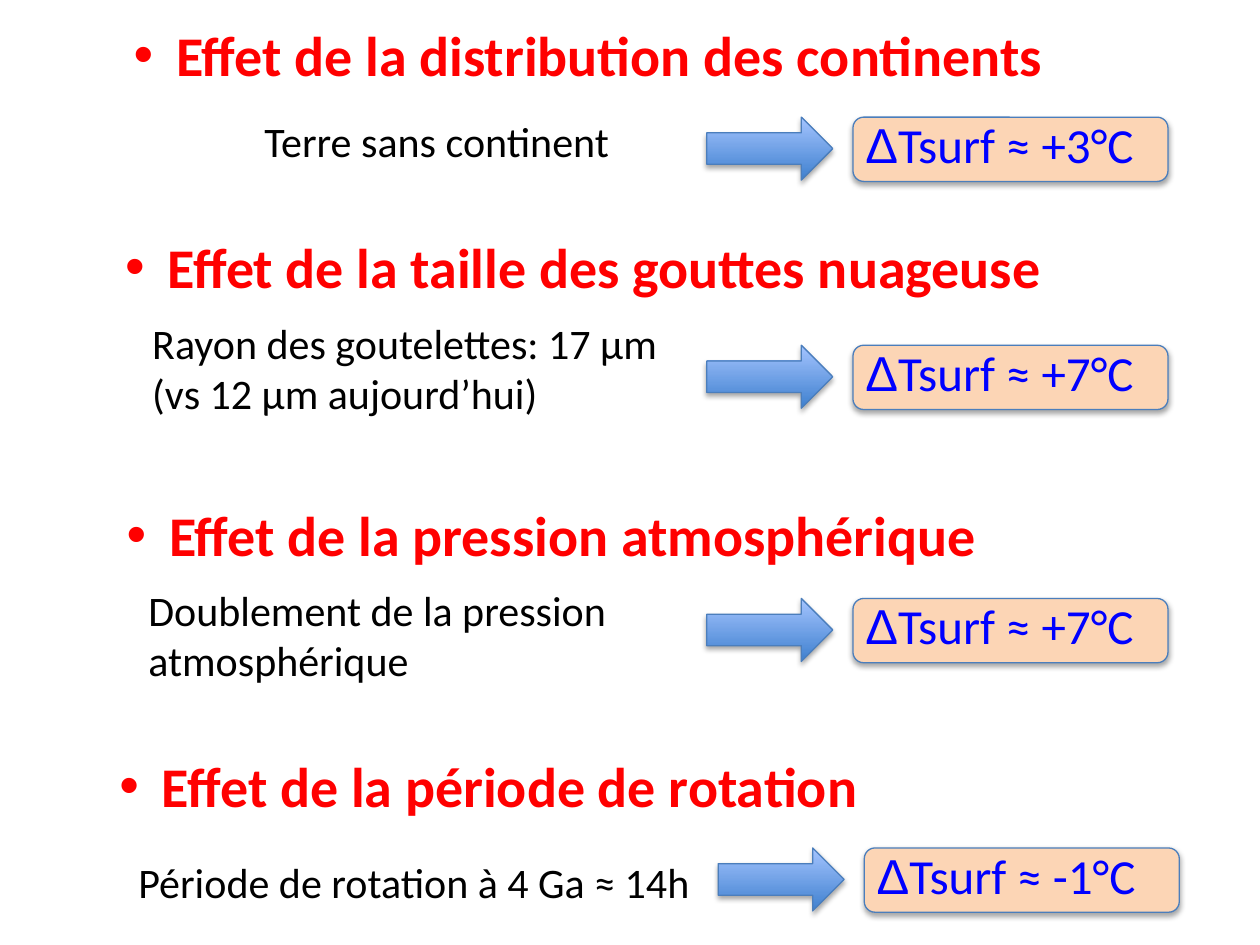
from dataclasses import dataclass

from lxml.etree import SubElement
from pptx import Presentation
from pptx.dml.color import RGBColor
from pptx.enum.shapes import MSO_SHAPE
from pptx.enum.text import MSO_ANCHOR, MSO_AUTO_SIZE, PP_ALIGN
from pptx.oxml.ns import qn
from pptx.util import Inches, Pt


def color(value):
    return RGBColor.from_string(value)


@dataclass
class Effect:
    heading: str
    heading_left: float
    heading_top: float
    cause: list
    cause_box: tuple
    change: str
    result_top: float
    shift: float = 0
    wrap: bool = True


EFFECTS = [
    Effect("Effet de la distribution des continents", 0.17, 0.08,
           ["Terre sans continent"], (2, 0.87, 6.42, 0.5), "+3°C", 0.93),
    Effect("Effet de la taille des gouttes nuageuse", 0.17, 1.76,
           ["Rayon des goutelettes: 17 μm", "(vs 12 μm aujourd’hui)"],
           (1.11, 2.47, 6.42, 0.91), "+7°C", 2.74),
    Effect("Effet de la pression atmosphérique", -0.08, 3.89,
           ["Doublement de la pression atmosphérique"],
           (1.08, 4.59, 4.67, 0.91), "+7°C", 4.75),
    Effect("Effet de la période de rotation", -0.58, 5.88,
           ["Période de rotation à 4 Ga ≈ 14h"], (1, 6.75, 4.62, 0.5),
           "-1°C", 6.73, shift=0.09, wrap=False),
]


class EffectSlide:
    FONT = "Calibri"
    HEADING = "FF0000"
    BODY = "000000"
    RESULT = "0000FF"
    BOX = "FCD5B5"
    OUTLINE = "4B7EBC"
    ARROW = ("3F80CE", "A4C4FF")

    def __init__(self, presentation):
        self.slide = presentation.slides.add_slide(presentation.slide_layouts[5])

    def style(self, paragraph, size, value, bold=False):
        font = paragraph.font
        font.name = self.FONT
        font.size = Pt(size)
        font.bold = bold
        font.color.rgb = color(value)

    def textbox(self, box, wrap=True):
        frame = self.slide.shapes.add_textbox(*map(Inches, box)).text_frame
        frame.word_wrap = wrap
        frame.auto_size = MSO_AUTO_SIZE.SHAPE_TO_FIT_TEXT
        return frame

    def format_heading(self, frame, text):
        frame.word_wrap = True
        frame.auto_size = MSO_AUTO_SIZE.NONE
        frame.vertical_anchor = MSO_ANCHOR.MIDDLE
        paragraph = frame.paragraphs[0]
        paragraph.text = f" {text}"
        paragraph.alignment = PP_ALIGN.CENTER
        self.style(paragraph, 32, self.HEADING, bold=True)
        properties = paragraph._p.get_or_add_pPr()
        SubElement(properties, qn("a:buFont"), typeface="Arial")
        SubElement(properties, qn("a:buChar"), char="•")

    def title(self, text, left, top):
        title = self.slide.shapes.title
        title.left, title.top = Inches(left), Inches(top)
        title.width, title.height = Inches(9), Inches(0.7)
        self.format_heading(title.text_frame, text)

    def heading(self, text, left, top):
        self.format_heading(self.textbox((left, top, 9, 0.7)), text)

    def cause(self, lines, box, wrap):
        frame = self.textbox(box, wrap)
        frame.text = "\n".join(lines)
        for paragraph in frame.paragraphs:
            self.style(paragraph, 24, self.BODY)

    def raised_shape(self, kind, box):
        shape = self.slide.shapes.add_shape(kind, *map(Inches, box))
        shape.line.color.rgb = color(self.OUTLINE)
        shape.line.width = Pt(0.75)
        shape.shadow.inherit = False
        effects = shape._element.spPr.find(qn("a:effectLst"))
        shadow = SubElement(effects, qn("a:outerShdw"), blurRad=str(Pt(3.1)),
                            dist=str(Pt(1.8)), dir="5400000", rotWithShape="0")
        black = SubElement(shadow, qn("a:srgbClr"), val="000000")
        SubElement(black, qn("a:alpha"), val="35000")
        return shape

    def arrow(self, left, top):
        fill = self.raised_shape(MSO_SHAPE.RIGHT_ARROW, (left, top, 1, 0.5)).fill
        fill.gradient()
        fill.gradient_angle = 90
        for position, (stop, value) in enumerate(zip(fill.gradient_stops, self.ARROW)):
            stop.position = position
            stop.color.rgb = color(value)

    def result(self, change, left, top):
        box = self.raised_shape(MSO_SHAPE.ROUNDED_RECTANGLE, (left, top, 2.5, 0.51))
        box.fill.solid()
        box.fill.fore_color.rgb = color(self.BOX)
        paragraph = self.textbox((left, top - 0.07, 2.73, 0.57)).paragraphs[0]
        self.style(paragraph, 28, self.RESULT)
        delta = paragraph.add_run()
        delta.text = "Δ"
        delta.font.name = "Arial"
        paragraph.add_run().text = f"Tsurf ≈ {change}"


def main():
    presentation = Presentation()
    presentation.slide_width, presentation.slide_height = Inches(10), Inches(7.5)
    page = EffectSlide(presentation)
    for index, effect in enumerate(EFFECTS):
        add_heading = page.heading if index else page.title
        add_heading(effect.heading, effect.heading_left, effect.heading_top)
        page.cause(effect.cause, effect.cause_box, effect.wrap)
        page.result(effect.change, 6.77 + effect.shift, effect.result_top)
        page.arrow(5.61 + effect.shift, effect.result_top)
    presentation.save("out.pptx")


if __name__ == "__main__":
    main()
